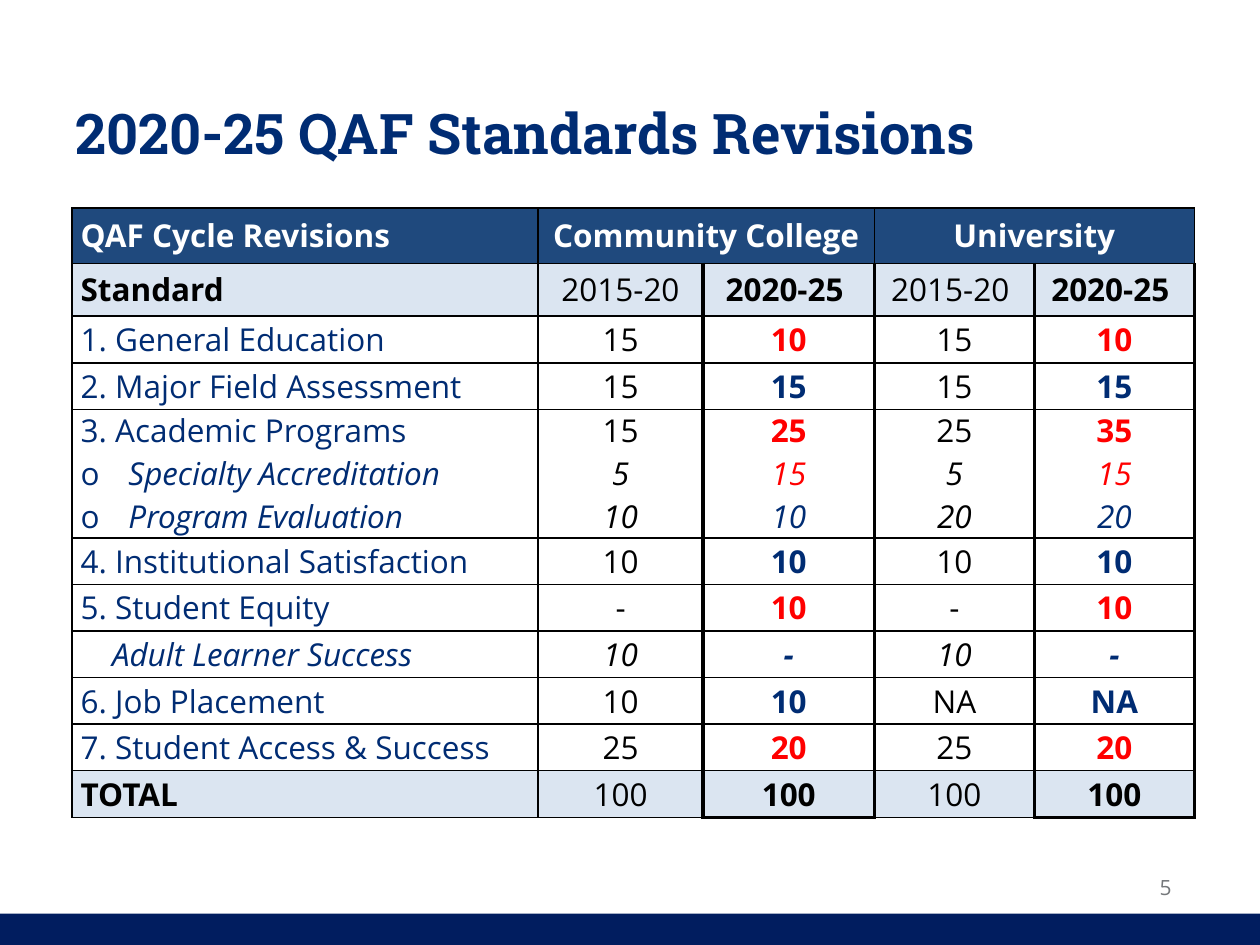
"""Build the slide that compares the QAF standards of two review cycles."""
from lxml.etree import SubElement
from pptx import Presentation
from pptx.dml.color import RGBColor
from pptx.enum.shapes import MSO_SHAPE
from pptx.enum.text import MSO_ANCHOR as ANCHOR, PP_ALIGN as ALIGN
from pptx.oxml.ns import qn
from pptx.util import Inches, Pt

NAVY = RGBColor(0x00, 0x2C, 0x73)
FOOTER = RGBColor(0x01, 0x1D, 0x5F)
HEADER = RGBColor(0x1F, 0x49, 0x7D)
PALE = RGBColor(0xDB, 0xE5, 0xF1)
WHITE = RGBColor(0xFF, 0xFF, 0xFF)
BLACK = RGBColor(0x00, 0x00, 0x00)
RED = RGBColor(0xFF, 0x00, 0x00)
GRAY = RGBColor(0x75, 0x78, 0x7B)

BODY_FONT, TITLE_FONT = "Open Sans", "Roboto Slab"
TITLE = "2020-25 QAF Standards Revisions"
PAGE = "5"
GROUPS = ["QAF Cycle Revisions", "Community College", "", "University", ""]
CYCLES = ["Standard", "2015-20", "2020-25 ", "2015-20 ", "2020-25 "]
TOTALS = ["TOTAL", "100", "100", "100", "100"]

MAIN, BULLET, INDENT = "main", "bullet", "indent"
STANDARDS = [
    [(MAIN, "1. General Education", "15", "10", "15", "10")],
    [(MAIN, "2. Major Field Assessment", "15", "15", "15", "15")],
    [(MAIN, "3. Academic Programs", "15", "25", "25", "35"),
     (BULLET, "Specialty Accreditation", "5", "15", "5", "15"),
     (BULLET, "Program Evaluation", "10", "10", "20", "20")],
    [(MAIN, "4. Institutional Satisfaction", "10", "10", "10", "10")],
    [(MAIN, "5. Student Equity", "-", "10", "-", "10")],
    [(INDENT, "Adult Learner Success", "10", "-", "10", "-")],
    [(MAIN, "6. Job Placement", "10", "10", "NA", "NA")],
    [(MAIN, "7. Student Access & Success", "25", "20", "25", "20")],
]

COL_WIDTHS = [3.7, 1.31, 1.36, 1.27, 1.27]
ROW_HEIGHTS = [0.44, 0.42] + [1.02 if len(s) > 1 else 0.37 for s in STANDARDS] + [0.37]
NEW_COLS = (2, 4)
THIN, THICK = 1, 2.25
LAST = len(ROW_HEIGHTS) - 1


def style(p, size, color, font=BODY_FONT, bold=False, italic=False):
    for r in p.runs:
        r.font.name, r.font.size = font, Pt(size)
        r.font.bold, r.font.italic = bold, italic
        r.font.color.rgb = color


def set_indent(p, kind):
    if kind == MAIN:
        return
    pPr = p._p.get_or_add_pPr()
    pPr.set("marL", str(Inches(0.38 if kind == BULLET else 0.25)))
    if kind == BULLET:
        pPr.set("indent", str(-Inches(0.38)))
        SubElement(pPr, qn("a:buFont"), typeface=BODY_FONT)
        SubElement(pPr, qn("a:buChar"), char="o")


def set_borders(cell, row, col):
    left = THICK if row and col > 1 else THIN
    right = THICK if row and col > 0 else THIN
    bottom = THICK if row == LAST and col in NEW_COLS else THIN
    tcPr = cell._tc.get_or_add_tcPr()
    for side, width in zip("LRTB", (left, right, THIN, bottom)):
        ln = SubElement(tcPr, qn(f"a:ln{side}"), w=str(Pt(width)))
        SubElement(SubElement(ln, qn("a:solidFill")), qn("a:srgbClr"), val=str(BLACK))


def format_cell(cell, row, col, fill=None):
    set_borders(cell, row, col)
    if fill is None:
        cell.fill.background()
    else:
        cell.fill.solid()
        cell.fill.fore_color.rgb = fill
    cell.vertical_anchor = ANCHOR.MIDDLE
    cell.margin_left = cell.margin_right = Inches(0.07)
    cell.margin_top = cell.margin_bottom = 0
    for p in cell.text_frame.paragraphs:
        p.alignment = ALIGN.CENTER if col else ALIGN.LEFT


def fill_label_row(table, row, texts, fill, color):
    for col, text in enumerate(texts):
        cell = table.cell(row, col)
        cell.text_frame.text = text
        format_cell(cell, row, col, fill)
        bold = row == 0 or col == 0 or col in NEW_COLS
        style(cell.text_frame.paragraphs[0], 18, color, bold=bold)


def fill_standard_row(table, row, lines):
    for col in range(len(COL_WIDTHS)):
        cell = table.cell(row, col)
        cell.text_frame.text = "\n".join(line[col + 1] for line in lines)
        format_cell(cell, row, col)
        for p, (kind, *values) in zip(cell.text_frame.paragraphs, lines):
            color = BLACK if col else NAVY
            if col in NEW_COLS:
                changed = values[col] not in (values[col - 1], "-")
                color = RED if changed else NAVY
            if col == 0:
                set_indent(p, kind)
            style(p, 18, color, bold=col in NEW_COLS and kind != BULLET,
                  italic=kind != MAIN)


def add_standards_table(slide):
    frame = slide.shapes.add_table(
        len(ROW_HEIGHTS), len(COL_WIDTHS), Inches(0.57), Inches(1.65),
        Inches(sum(COL_WIDTHS)), Inches(sum(ROW_HEIGHTS)))
    table = frame.table
    table.first_row = table.horz_banding = False
    for column, width in zip(table.columns, COL_WIDTHS):
        column.width = Inches(width)
    for table_row, height in zip(table.rows, ROW_HEIGHTS):
        table_row.height = Inches(height)
    fill_label_row(table, 0, GROUPS, HEADER, WHITE)
    fill_label_row(table, 1, CYCLES, PALE, BLACK)
    for row, lines in enumerate(STANDARDS, start=2):
        fill_standard_row(table, row, lines)
    fill_label_row(table, LAST, TOTALS, PALE, BLACK)
    for col in NEW_COLS:
        table.cell(0, col - 1).merge(table.cell(0, col))


def add_footer(slide):
    bar = slide.shapes.add_shape(
        MSO_SHAPE.RECTANGLE, 0, Inches(7.25), Inches(10), Inches(0.25))
    bar.shadow.inherit = False
    bar.fill.solid()
    bar.fill.fore_color.rgb = FOOTER
    bar.line.fill.background()
    number = slide.shapes.add_textbox(Inches(9.04), Inches(6.79), Inches(0.42), Inches(0.5))
    tf = number.text_frame
    tf.word_wrap = True
    tf.vertical_anchor = ANCHOR.MIDDLE
    tf.text = PAGE
    tf.paragraphs[0].alignment = ALIGN.CENTER
    style(tf.paragraphs[0], 12, GRAY)


def add_title(slide):
    title = slide.shapes.title
    title.left, title.top = Inches(0.5), Inches(0.42)
    title.width, title.height = Inches(9), Inches(1.25)
    tf = title.text_frame
    tf.text = TITLE
    tf.vertical_anchor = ANCHOR.MIDDLE
    tf.paragraphs[0].alignment = ALIGN.LEFT
    style(tf.paragraphs[0], 32, NAVY, TITLE_FONT, bold=True)


def main():
    prs = Presentation()
    prs.slide_width, prs.slide_height = Inches(10), Inches(7.5)
    slide = prs.slides.add_slide(prs.slide_layouts[5])
    add_footer(slide)
    add_title(slide)
    add_standards_table(slide)
    prs.save("out.pptx")


if __name__ == "__main__":
    main()
